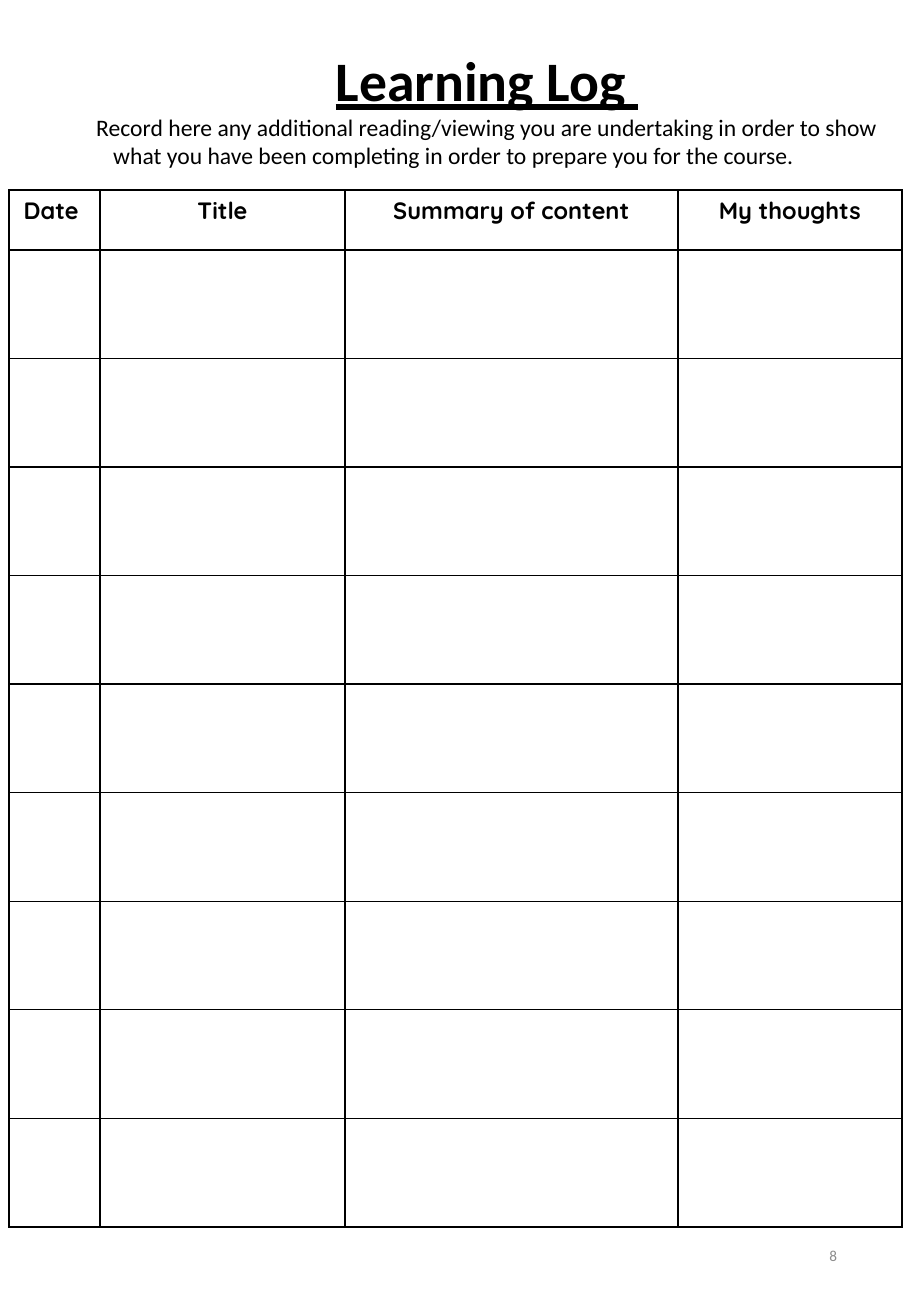
from lxml import etree
from pptx import Presentation, util as u
from pptx.dml.color import RGBColor
from pptx.enum import text
from pptx.oxml.ns import qn

TITLE = "Learning Log "
INTRO = ("Record here any additional reading/viewing you are undertaking in order "
         "to show what you have been completing in order to prepare you for the course. ")
PAGE_NUMBER = "8"
COLUMNS = [("Date ", 91), ("Title", 245), ("Summary of content", 333), ("My thoughts", 224)]
ENTRIES = 9

# Lengths in px
SLIDE = (911, 1316)
HEADING_BOX = (21, 39, 871, 137)
NUMBER_BOX = (644, 1220, 205, 70)
TABLE_LEFT, TABLE_TOP, TABLE_HEIGHT, HEADER_HEIGHT = 9, 190, 1037, 60
FIRST_LINE_INDENT = 61
BLACK, GREY = "000000", "8C8C8C"


def px(n):
    return u.Emu(round(n * 914400 / 121.5))


def write(p, words, size, font="Calibri", color=BLACK, bold=False, underline=False,
          align=text.PP_ALIGN.CENTER, indent=0):
    p.alignment = align
    if indent:
        pPr = p._p.get_or_add_pPr()
        pPr.set("marL", "0")
        pPr.set("indent", str(px(indent)))
    r = p.add_run()
    r.text = words
    f = r.font
    f.name, f.size, f.bold, f.underline = font, u.Pt(size), bold, underline
    f.color.rgb = RGBColor.from_string(color)


def set_frame(tf):
    tf.word_wrap = True
    tf.auto_size = text.MSO_AUTO_SIZE.NONE
    tf.vertical_anchor = text.MSO_ANCHOR.MIDDLE


def outline(cell):
    """Give a cell four thin black borders and no fill."""
    tcPr = cell._tc.get_or_add_tcPr()
    for side in ("lnL", "lnR", "lnT", "lnB"):
        ln = etree.SubElement(tcPr, qn(f"a:{side}"), w=str(u.Pt(1)))
        fill = etree.SubElement(ln, qn("a:solidFill"))
        etree.SubElement(fill, qn("a:srgbClr"), val=BLACK)
    cell.fill.background()


def add_heading(s):
    sp = s.shapes.title
    sp.left, sp.top, sp.width, sp.height = map(px, HEADING_BOX)
    tf = sp.text_frame
    set_frame(tf)
    write(tf.paragraphs[0], TITLE, 33, bold=True, underline=True, indent=FIRST_LINE_INDENT)
    write(tf.add_paragraph(), INTRO, 14, indent=FIRST_LINE_INDENT)


def add_log(s):
    width = sum(w for _, w in COLUMNS)
    table = s.shapes.add_table(ENTRIES + 1, len(COLUMNS), px(TABLE_LEFT), px(TABLE_TOP),
                               px(width), px(TABLE_HEIGHT)).table
    table.horz_banding = False
    for i, row in enumerate(table.rows):
        row.height = px((TABLE_HEIGHT - HEADER_HEIGHT) / ENTRIES if i else HEADER_HEIGHT)
    for cell in table.iter_cells():
        outline(cell)
    for i, (label, w) in enumerate(COLUMNS):
        table.columns[i].width = px(w)
        write(table.cell(0, i).text_frame.paragraphs[0], label, 14, "Quicksand", bold=True)


def add_page_number(s):
    tf = s.shapes.add_textbox(*map(px, NUMBER_BOX)).text_frame
    set_frame(tf)
    write(tf.paragraphs[0], PAGE_NUMBER, 9, color=GREY, align=text.PP_ALIGN.RIGHT)


def main():
    prs = Presentation()
    prs.slide_width, prs.slide_height = map(px, SLIDE)
    s = prs.slides.add_slide(prs.slide_layouts[5])
    add_heading(s)
    add_log(s)
    add_page_number(s)
    prs.save("out.pptx")


if __name__ == "__main__":
    main()
